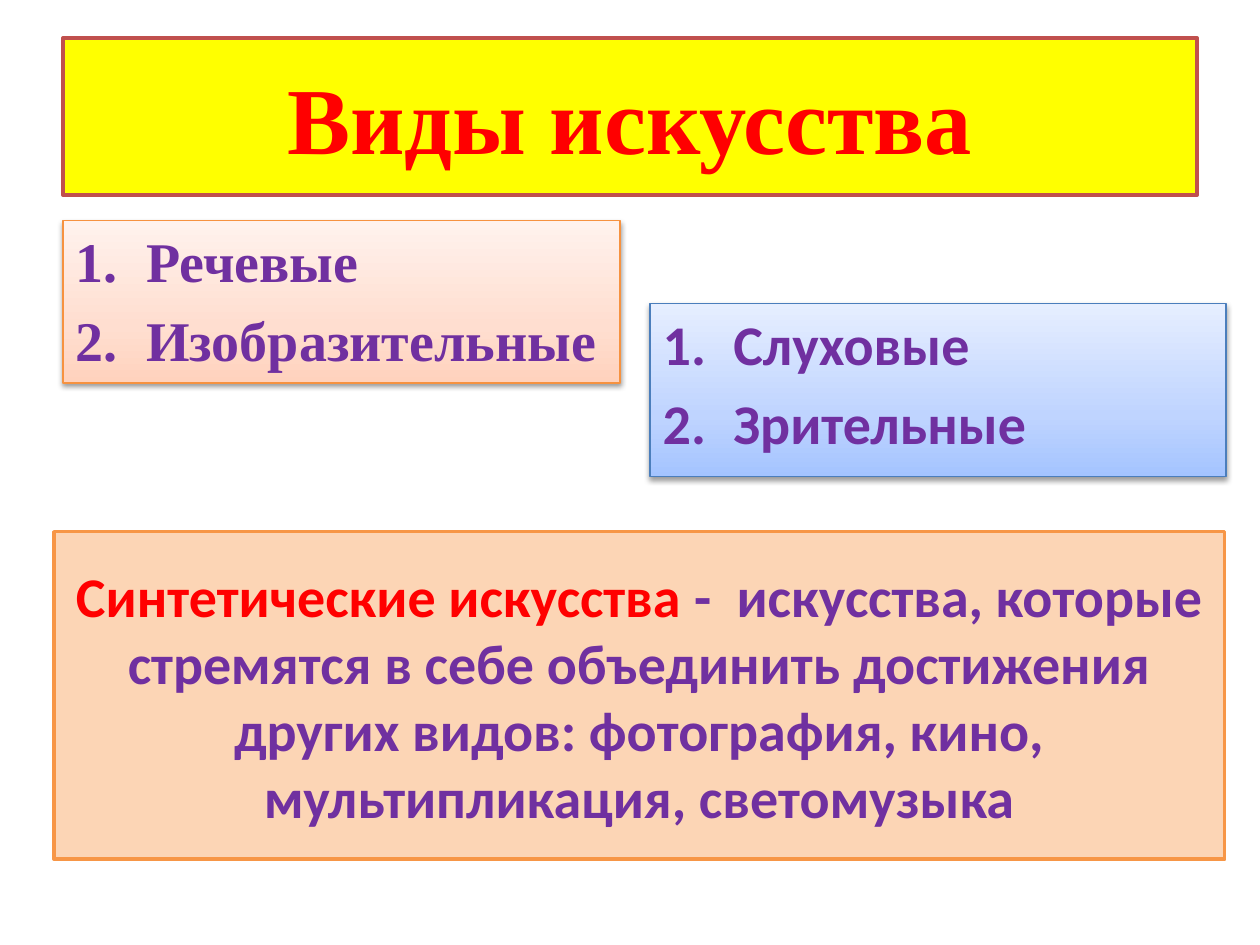
from copy import deepcopy
from pptx import Presentation
from pptx import util as u
from pptx.dml.color import RGBColor
from pptx.enum import shapes, text
from pptx.oxml import parse_xml
from pptx.oxml.ns import nsdecls, qn

RED = RGBColor(0xFF, 0x00, 0x00)
YELLOW = RGBColor(0xFF, 0xFF, 0x00)
PURPLE = RGBColor(0x70, 0x30, 0xA0)
BRICK = RGBColor(0xC0, 0x50, 0x4D)
PEACH = RGBColor(0xFC, 0xD5, 0xB5)
ORANGE = RGBColor(0xF7, 0x96, 0x46)
AMBER = RGBColor(0xF6, 0x92, 0x40)
BLUE = RGBColor(0x4B, 0x7E, 0xBC)
WARM = [RGBColor(0xFF, 0xD2, 0xBD), RGBColor(0xFF, 0xDE, 0xD0), RGBColor(0xFF, 0xF2, 0xED)]
COOL = [RGBColor(0xA4, 0xC4, 0xFF), RGBColor(0xBF, 0xD4, 0xFF), RGBColor(0xE6, 0xEE, 0xFF)]
SERIF = "Times New Roman"
SANS = "Calibri"


def write(para, words, font=SANS, size=32, color=PURPLE):
    run = para.add_run()
    run.text = words
    run.font.name = font
    run.font.size = u.Pt(size)
    run.font.bold = True
    run.font.color.rgb = color


def place(shape, box, edge, width):
    shape.left, shape.top, shape.width, shape.height = map(u.Inches, box)
    shape.line.color.rgb = edge
    shape.line.width = u.Pt(width)
    shape.shadow.inherit = False
    shape.text_frame.word_wrap = True
    shape.text_frame.auto_size = text.MSO_AUTO_SIZE.NONE


def panel(shape, box, fill, edge, parts):
    place(shape, box, edge, 2)
    shape.fill.solid()
    shape.fill.fore_color.rgb = fill
    frame = shape.text_frame
    frame.vertical_anchor = text.MSO_ANCHOR.MIDDLE
    para = frame.paragraphs[0]
    para.alignment = text.PP_ALIGN.CENTER
    for words, style in parts:
        write(para, words, **style)


def shade(shape, colors):
    shape.fill.gradient()
    shape.fill.gradient_angle = 90
    stops = shape._element.spPr.find(".//" + qn("a:gsLst"))
    stops.append(deepcopy(stops[0]))
    for stop, color, spot in zip(shape.fill.gradient_stops, colors, (0, 0.35, 1)):
        stop.color.rgb = color
        stop.position = spot


def shadow(shape):
    shape._element.spPr.find(qn("a:effectLst")).append(parse_xml(
        f'<a:outerShdw {nsdecls("a")} blurRad="40000" dist="20000" dir="5400000" '
        'rotWithShape="0"><a:srgbClr val="000000"><a:alpha val="38000"/>'
        '</a:srgbClr></a:outerShdw>'))


def numbers(shape, box, colors, edge, items, font):
    place(shape, box, edge, 0.75)
    shade(shape, colors)
    shadow(shape)
    frame = shape.text_frame
    for i, item in enumerate(items):
        para = frame.add_paragraph() if i else frame.paragraphs[0]
        props = para._p.get_or_add_pPr()
        props.set("marL", str(u.Inches(0.56)))
        props.set("indent", str(u.Inches(-0.56)))
        props.append(parse_xml(f'<a:buFont {nsdecls("a")} typeface="+mj-lt"/>'))
        props.append(parse_xml(f'<a:buAutoNum {nsdecls("a")} type="arabicPeriod"/>'))
        write(para, item, font=font)


def main():
    deck = Presentation()
    deck.slide_width, deck.slide_height = u.Inches(10), u.Inches(7.5)
    slide = deck.slides.add_slide(deck.slide_layouts[3])
    title, left, right = list(slide.placeholders)[:3]
    panel(title, (0.5, 0.3, 9, 1.25), YELLOW, BRICK,
          [("Виды искусства", dict(font=SERIF, size=54, color=RED))])
    numbers(left, (0.5, 1.75, 4.42, 1.29), WARM, AMBER,
            ["Речевые", "Изобразительные"], SERIF)
    numbers(right, (5.16, 2.41, 4.57, 1.37), COOL, BLUE,
            ["Слуховые", "Зрительные"], SANS)
    note = slide.shapes.add_shape(shapes.MSO_SHAPE.RECTANGLE, 0, 0, 0, 0)
    panel(note, (0.43, 4.22, 9.29, 2.6), PEACH, ORANGE, [
        ("Синтетические искусства ", dict(color=RED)),
        ("-  искусства, которые стремятся в себе объединить достижения "
         "других видов: фотография, кино, мультипликация, светомузыка", {})])
    deck.save("out.pptx")


if __name__ == "__main__":
    main()
